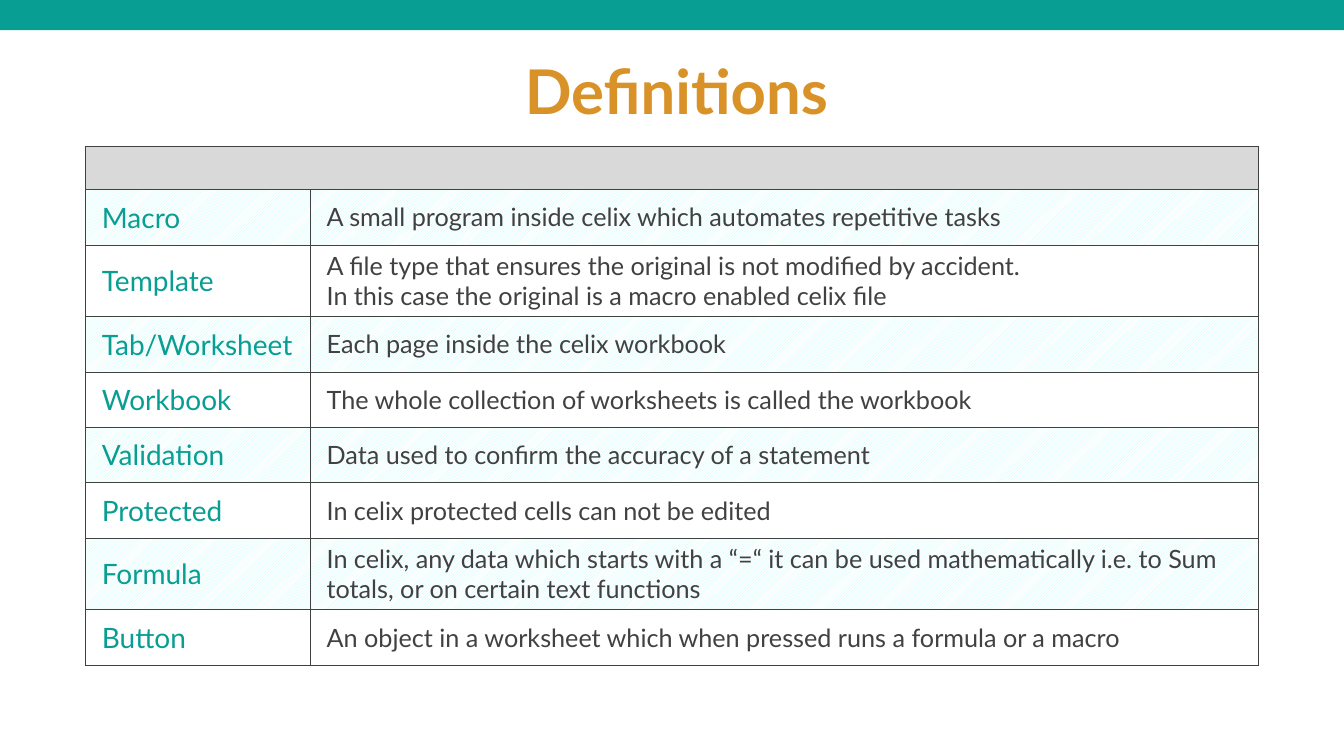
from lxml.etree import SubElement
from pptx import Presentation
from pptx.dml.color import RGBColor
from pptx.enum.dml import MSO_PATTERN
from pptx.enum.shapes import MSO_SHAPE
from pptx.enum.text import MSO_ANCHOR, PP_ALIGN
from pptx.oxml import parse_xml
from pptx.oxml.ns import nsdecls, qn
from pptx.util import Inches, Pt

TITLE = "Definitions"
DEFINITIONS = [
    ("Macro", ["A small program inside celix which automates repetitive tasks"]),
    ("Template", ["A file type that ensures the original is not modified by accident.",
                  "In this case the original is a macro enabled celix file"]),
    ("Tab/Worksheet", ["Each page inside the celix workbook"]),
    ("Workbook", ["The whole collection of worksheets is called the workbook"]),
    ("Validation", ["Data used to confirm the accuracy of a statement"]),
    ("Protected", ["In celix protected cells can not be edited"]),
    ("Formula", ["In celix, any data which starts with a “=“ it can be used "
                 "mathematically i.e. to Sum totals, or on certain text functions"]),
    ("Button", ["An object in a worksheet which when pressed runs a formula or a macro"]),
]
TWO_LINE_TERMS = {"Template", "Formula"}
FONT = "Lato"
TEAL, ORANGE, INK = "099E93", "D99228", "414141"
GREY, MINT, WHITE = "D9D9D9", "BEFBF7", "FFFFFF"
SLIDE_SIZE = (13.33, 7.5)
BAND = (0, -0.07, 13.5, 0.37)
TITLE_AREA = (0.96, 0.55, 11.5, 0.77)
TABLE_LEFT, TABLE_TOP = 0.85, 1.45
COLUMNS = (2.23, 9.4)
HEADER_ROW, ONE_LINE_ROW, TWO_LINE_ROW = 0.43, 0.55, 0.71


def color(value):
    return RGBColor.from_string(value)


def inches(lengths):
    return [Inches(length) for length in lengths]


def add_span(para, text, size, ink, bold=False):
    span = para.add_run()
    span.text = text
    span.font.name = FONT
    span.font.size = Pt(size)
    span.font.bold = bold
    span.font.color.rgb = color(ink)


def add_borders(cell):
    properties = cell._tc.get_or_add_tcPr()
    for position, side in enumerate(("lnL", "lnR", "lnT", "lnB")):
        line = parse_xml(f'<a:{side} {nsdecls("a")} w="{Pt(0.5)}"/>')
        fill = SubElement(line, qn("a:solidFill"))
        SubElement(fill, qn("a:srgbClr"), val=INK)
        properties.insert(position, line)


def fill_solid(cell, value):
    cell.fill.solid()
    cell.fill.fore_color.rgb = color(value)


def fill_striped(cell):
    cell.fill.patterned()
    cell.fill.pattern = MSO_PATTERN.LIGHT_UPWARD_DIAGONAL
    cell.fill.fore_color.rgb = color(MINT)
    cell.fill.back_color.rgb = color(WHITE)


def write_cell(cell, lines, size, ink):
    cell.vertical_anchor = MSO_ANCHOR.MIDDLE
    cell.margin_left = Inches(0.16)
    para = cell.text_frame.paragraphs[0]
    for number, text in enumerate(lines):
        if number:
            para.add_line_break()
        add_span(para, text, size, ink)


def add_band(page):
    band = page.shapes.add_shape(MSO_SHAPE.RECTANGLE, *inches(BAND))
    band.shadow.inherit = False
    band.fill.solid()
    band.fill.fore_color.rgb = color(TEAL)
    band.line.fill.background()


def add_title(page):
    box = page.shapes.add_textbox(*inches(TITLE_AREA))
    frame = box.text_frame
    frame.word_wrap = True
    frame.vertical_anchor = MSO_ANCHOR.MIDDLE
    para = frame.paragraphs[0]
    para.alignment = PP_ALIGN.CENTER
    para.line_spacing = 0.9
    add_span(para, TITLE, 44, ORANGE, bold=True)


def add_definitions(page):
    heights = [HEADER_ROW] + [TWO_LINE_ROW if term in TWO_LINE_TERMS else ONE_LINE_ROW
                              for term, _ in DEFINITIONS]
    area = inches((TABLE_LEFT, TABLE_TOP, sum(COLUMNS), sum(heights)))
    table = page.shapes.add_table(len(heights), len(COLUMNS), *area).table
    table.first_row = table.horz_banding = False
    for column, width in zip(table.columns, COLUMNS):
        column.width = Inches(width)
    for row, height in zip(table.rows, heights):
        row.height = Inches(height)
    table.cell(0, 0).merge(table.cell(0, 1))
    for cell in table.rows[0].cells:
        fill_solid(cell, GREY)
    for index, (term, meaning) in enumerate(DEFINITIONS, 1):
        term_cell, meaning_cell = table.rows[index].cells
        write_cell(term_cell, [term], 20, TEAL)
        write_cell(meaning_cell, meaning, 18, INK)
        for cell in (term_cell, meaning_cell):
            if index % 2:
                fill_striped(cell)
            else:
                fill_solid(cell, WHITE)
    for cell in table.iter_cells():
        add_borders(cell)


def main():
    deck = Presentation()
    deck.slide_width, deck.slide_height = inches(SLIDE_SIZE)
    page = deck.slides.add_slide(deck.slide_layouts[6])
    add_band(page)
    add_title(page)
    add_definitions(page)
    deck.save("out.pptx")


if __name__ == "__main__":
    main()
